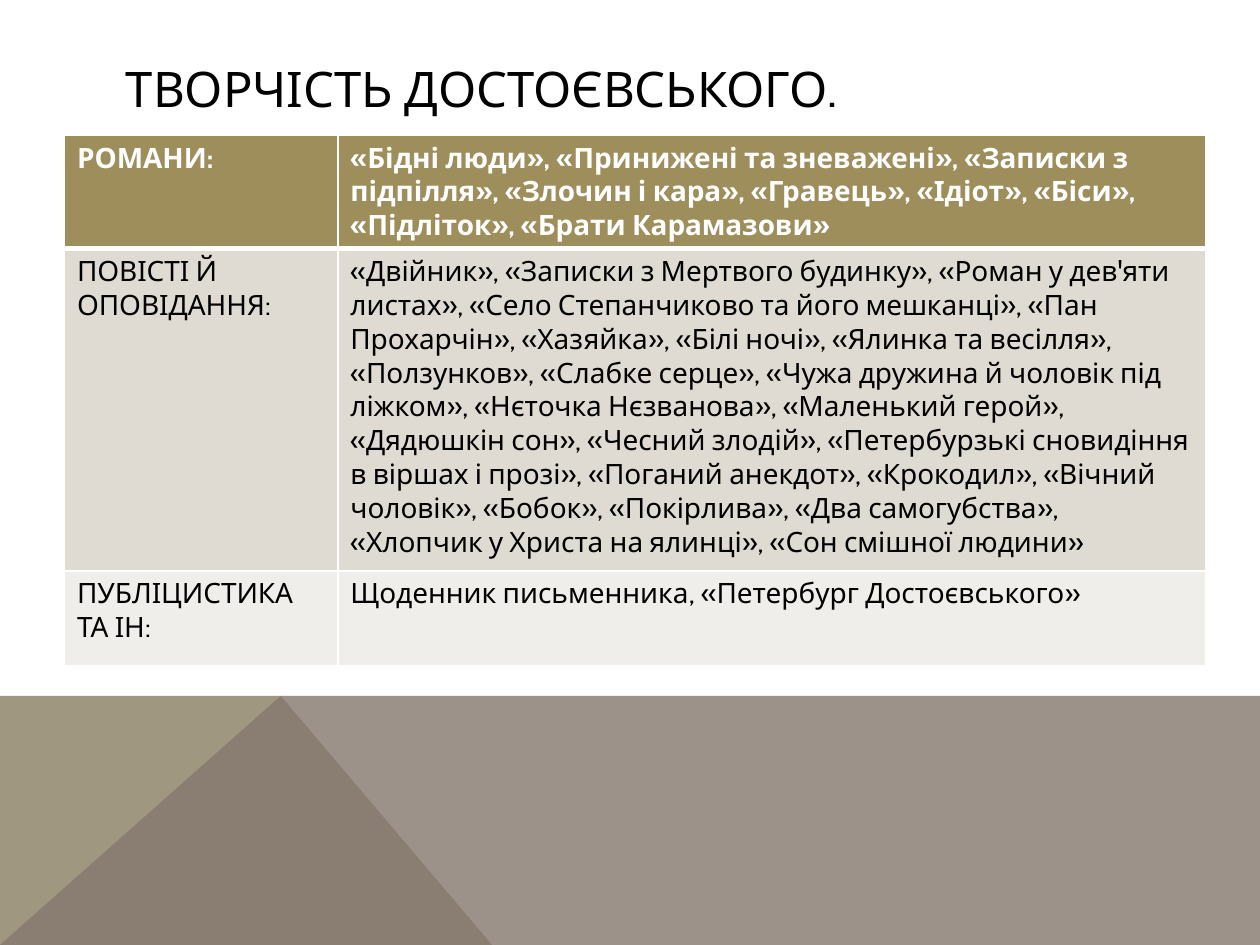
from lxml.etree import SubElement
from pptx import Presentation
from pptx.dml.color import RGBColor
from pptx.enum.text import MSO_ANCHOR
from pptx.oxml import parse_xml
from pptx.oxml.ns import nsdecls, qn
from pptx.util import Cm, Pt

FONT = "Cabin"
BLACK = RGBColor(0x00, 0x00, 0x00)
WHITE = RGBColor(0xFF, 0xFF, 0xFF)
GOLD = RGBColor(0x9E, 0x8E, 0x5C)
SAND = RGBColor(0xDF, 0xDB, 0xD2)
PALE = RGBColor(0xF0, 0xEE, 0xEA)
OLIVE = RGBColor(0xA0, 0x97, 0x81)
TAUPE = RGBColor(0x85, 0x77, 0x6D)

TITLE = "ТВОРЧІСТЬ ДОСТОЄВСЬКОГО."
WORKS = [
    ("РОМАНИ:",
     "«Бідні люди», «Принижені та зневажені», «Записки з підпілля», "
     "«Злочин і кара», «Гравець», «Ідіот», «Біси», «Підліток», "
     "«Брати Карамазови»"),
    ("ПОВІСТІ Й ОПОВІДАННЯ:",
     "«Двійник», «Записки з Мертвого будинку», «Роман у дев'яти листах», "
     "«Село Степанчиково та його мешканці», «Пан Прохарчін», «Хазяйка», "
     "«Білі ночі», «Ялинка та весілля», «Ползунков», «Слабке серце», "
     "«Чужа дружина й чоловік під ліжком», «Нєточка Нєзванова», "
     "«Маленький герой», «Дядюшкін сон», «Чесний злодій», "
     "«Петербурзькі сновидіння в віршах і прозі», «Поганий анекдот», "
     "«Крокодил», «Вічний чоловік», «Бобок», «Покірлива», "
     "«Два самогубства», «Хлопчик у Христа на ялинці», "
     "«Сон смішної людини»"),
    ("ПУБЛІЦИСТИКА ТА ІН:",
     "Щоденник письменника, «Петербург Достоєвського»"),
]
COL_WIDTHS = (5.51, 17.5)
ROW_HEIGHTS = (2.27, 6.5, 1.91)
ROW_FILLS = (GOLD, SAND, PALE)


def style_run(r, size, color, bold=False):
    """Give a run its font, size, colour and weight."""
    r.font.name = FONT
    r.font.size = Pt(size)
    r.font.bold = bold
    r.font.color.rgb = color


def add_polygon(slide, points, color, opacity=100):
    """Draw a filled outline through points given in centimetres."""
    start, *rest = [(Cm(x), Cm(y)) for x, y in points]
    builder = slide.shapes.build_freeform(*start)
    builder.add_line_segments(rest, close=True)
    s = builder.convert_to_shape()
    s.shadow.inherit = False
    s.fill.solid()
    s.fill.fore_color.rgb = color
    s.line.fill.background()
    if opacity < 100:
        clr = s.fill._xPr.find(".//" + qn("a:srgbClr"))
        SubElement(clr, qn("a:alpha"), val=str(opacity * 1000))


def add_footer_art(slide, left, top, width, height):
    """Draw the two overlapping facets along the foot of the slide."""
    right, bottom = left + width, top + height
    peak = (left + 5.66, top)
    add_polygon(slide, [(left, bottom), (left, top), peak,
                        (left + 9.92, bottom)], OLIVE)
    add_polygon(slide, [(left, bottom), peak, (right, top),
                        (right, bottom)], TAUPE, 80)


def add_title(slide, left, top, width, height):
    """Place the heading, centred vertically in its box."""
    tf = slide.shapes.add_textbox(Cm(left), Cm(top), Cm(width),
                                  Cm(height)).text_frame
    tf.word_wrap = True
    tf.vertical_anchor = MSO_ANCHOR.MIDDLE
    tf.text = TITLE
    style_run(tf.paragraphs[0].runs[0], 28, BLACK)


def set_borders(cell, widths):
    """Put white borders of the given point widths on a cell."""
    tc_pr = cell._tc.get_or_add_tcPr()
    for i, (side, width) in enumerate(widths.items()):
        tc_pr.insert(i, parse_xml(
            f'<a:ln{side} {nsdecls("a")} w="{Pt(width)}"><a:solidFill>'
            f'<a:srgbClr val="{WHITE}"/></a:solidFill></a:ln{side}>'))


def add_works_table(slide, left, top):
    """Build the table of works, one genre to a row."""
    table = slide.shapes.add_table(
        len(WORKS), len(COL_WIDTHS), Cm(left), Cm(top),
        Cm(sum(COL_WIDTHS)), Cm(sum(ROW_HEIGHTS))).table
    for col, width in zip(table.columns, COL_WIDTHS):
        col.width = Cm(width)
    for i, (row, texts) in enumerate(zip(table.rows, WORKS)):
        row.height = Cm(ROW_HEIGHTS[i])
        header = i == 0
        for cell, text in zip(row.cells, texts):
            cell.text = text
            cell.fill.solid()
            cell.fill.fore_color.rgb = ROW_FILLS[i]
            style_run(cell.text_frame.paragraphs[0].runs[0], 16,
                      WHITE if header else BLACK, header)
            set_borders(cell, {"L": 1, "R": 1, "T": 3 if i == 1 else 1,
                               "B": 3 if header else 1})


def main():
    """Assemble and save the slide."""
    prs = Presentation()
    prs.slide_width, prs.slide_height = Cm(25.4), Cm(19.05)
    slide = prs.slides.add_slide(prs.slide_layouts[6])
    add_footer_art(slide, 0, 14.03, 25.4, 5.02)
    add_title(slide, 2.29, 1.02, 20.88, 1.52)
    add_works_table(slide, 1.3, 2.72)
    prs.save("out.pptx")


if __name__ == "__main__":
    main()
